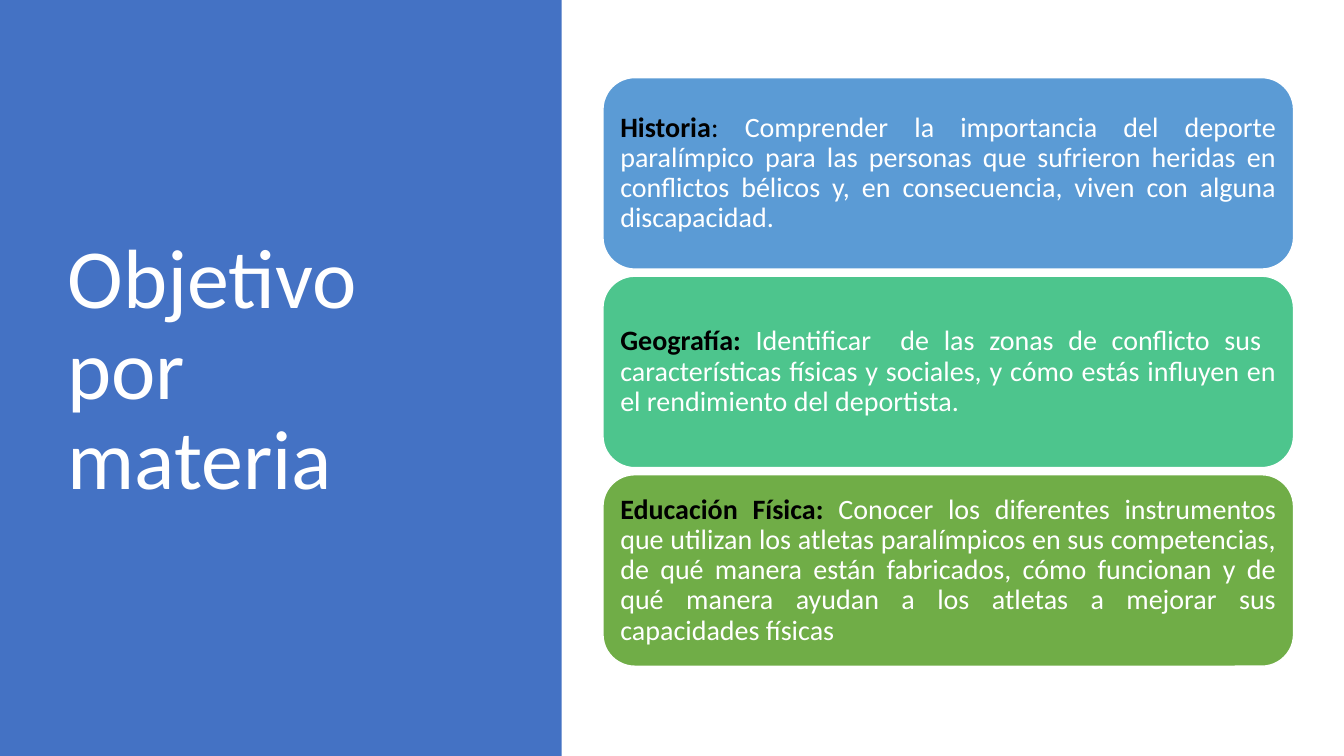
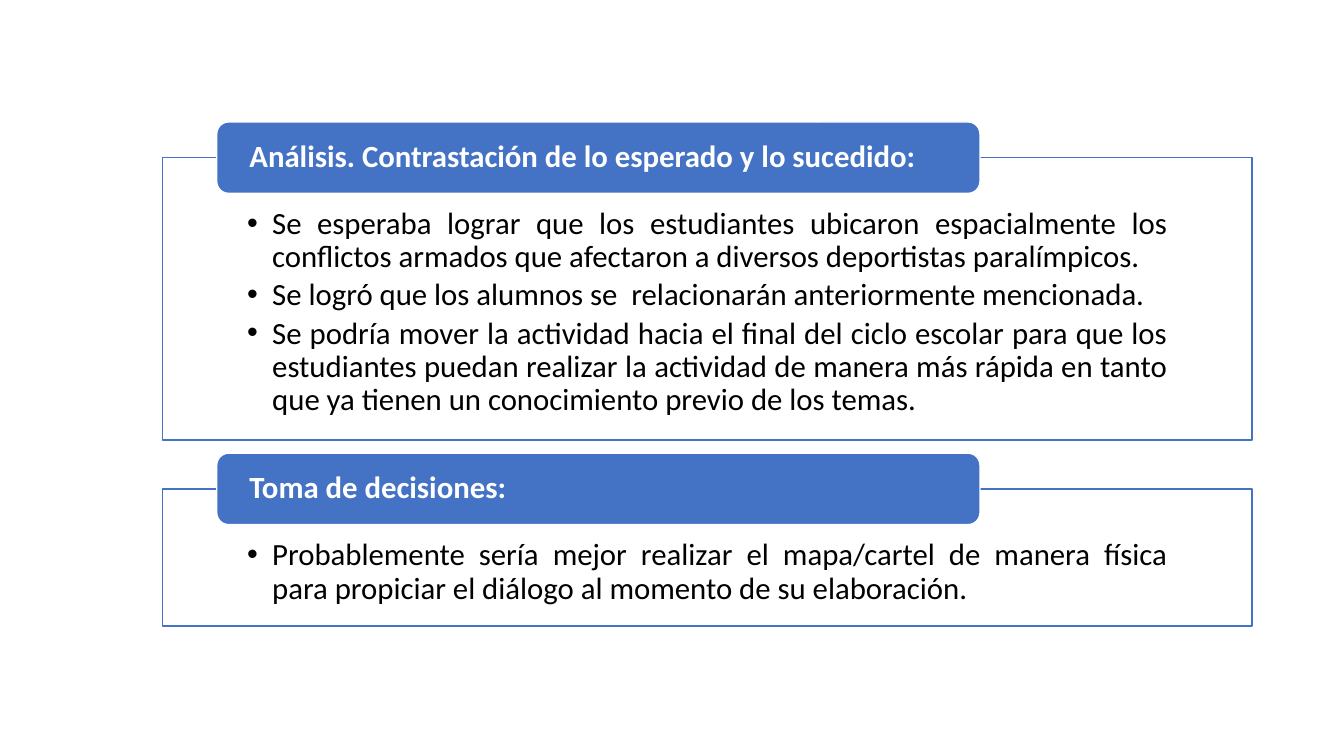
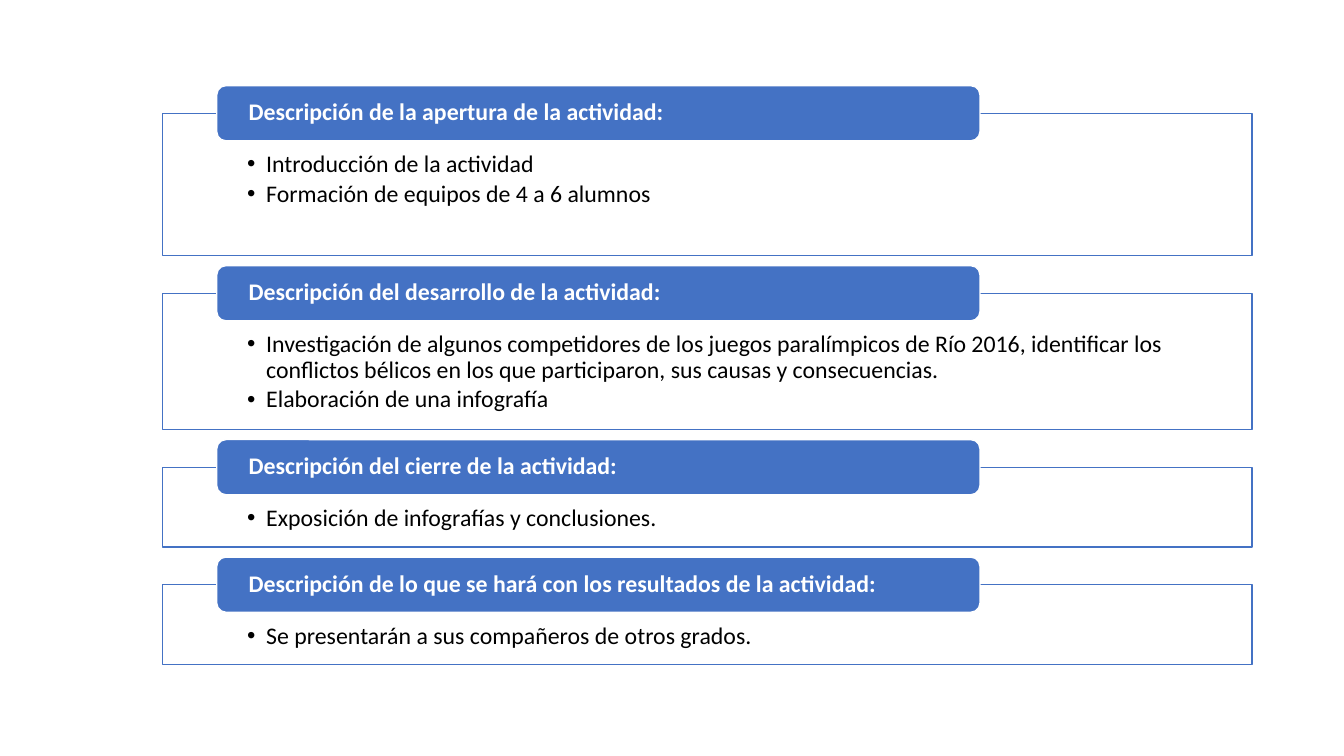
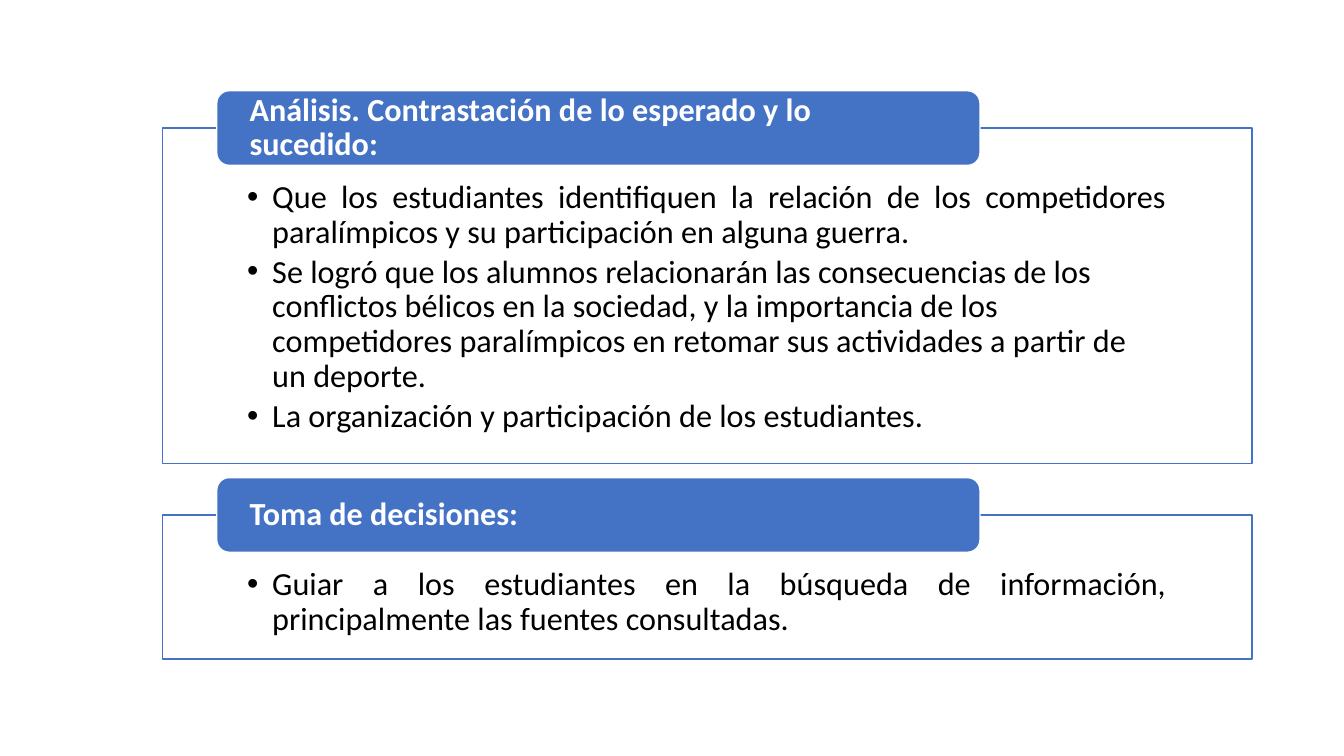
from lxml import etree
from pptx import Presentation
from pptx import util as u
from pptx.dml.color import RGBColor
from pptx.enum import shapes, text
from pptx.oxml.ns import qn

COLORS = {
    "white": "FFFFFF",
    "black": "000000",
    "blue": "4472C4",
    "sky": "5B9BD5",
    "mint": "4DC58D",
    "green": "70AD47",
}
FONT = "Calibri"
PX = 9144  # one hundredth of an inch
LEFT = text.PP_ALIGN.LEFT
JUSTIFY = text.PP_ALIGN.JUSTIFY
MIDDLE = text.MSO_ANCHOR.MIDDLE
TOP = text.MSO_ANCHOR.TOP
RECT = shapes.MSO_SHAPE.RECTANGLE
ROUNDED = shapes.MSO_SHAPE.ROUNDED_RECTANGLE
TITLE_ONLY, BLANK = 5, 6


def px(length):
    return u.Emu(round(length * PX))


def rgb(color):
    return RGBColor.from_string(COLORS[color])


class Deck:
    def __init__(self):
        self.prs = Presentation()
        self.prs.slide_width, self.prs.slide_height = px(1333), px(750)
        self.slide = None

    def new_slide(self, layout):
        self.slide = self.prs.slides.add_slide(self.prs.slide_layouts[layout])

    def box(self, kind, left, top, width, height, fill, line=None, opacity=None):
        shape = self.slide.shapes.add_shape(
            kind, px(left), px(top), px(width), px(height))
        shape.shadow.inherit = False
        shape.fill.solid()
        shape.fill.fore_color.rgb = rgb(fill)
        if opacity:
            srgb = shape.fill._xPr.find(".//" + qn("a:srgbClr"))
            etree.SubElement(srgb, qn("a:alpha"), val=str(opacity * 1000))
        if line:
            shape.line.color.rgb = rgb(line)
            shape.line.width = u.Pt(1)
        else:
            shape.line.fill.background()
        return shape

    def frame(self, shape, insets=(10, 5, 10, 5), anchor=MIDDLE):
        """Prepare the text frame; insets run left, top, right, bottom."""
        frame = shape.text_frame
        frame.word_wrap = True
        frame.auto_size = text.MSO_AUTO_SIZE.NONE
        frame.vertical_anchor = anchor
        (frame.margin_left, frame.margin_top,
         frame.margin_right, frame.margin_bottom) = map(px, insets)
        return frame

    def add_text(self, paragraph, content, size, color="white", bold=False,
                 align=LEFT, bullet_indent=0):
        """Append a formatted run; a bullet indent makes a list item."""
        paragraph.alignment = align
        paragraph.line_spacing = 0.9
        if bullet_indent:
            paragraph.space_after = u.Pt(0.16 * size)
            props = paragraph._p.get_or_add_pPr()
            props.set("marL", str(px(bullet_indent)))
            props.set("indent", str(-px(bullet_indent)))
            etree.SubElement(props, qn("a:buFont"), typeface="Arial")
            etree.SubElement(props, qn("a:buChar"), char="•")
        run = paragraph.add_run()
        run.text = content
        run.font.name, run.font.size, run.font.bold = FONT, u.Pt(size), bold
        run.font.color.rgb = rgb(color)

    def title(self, content, left, top, width, height):
        title = self.slide.shapes.title
        title.left, title.top, title.width, title.height = map(
            px, (left, top, width, height))
        self.add_text(self.frame(title).paragraphs[0], content, 60)

    def goal_card(self, top, fill, subject, colon_bold, goal):
        card = self.box(ROUNDED, 598, top, 685, 190, fill, line="white")
        paragraph = self.frame(card, (8, 8, 8, 8)).paragraphs[0]
        self.add_text(paragraph, subject, 20, "black", True, JUSTIFY)
        self.add_text(paragraph, ": ", 20, "black", colon_bold, JUSTIFY)
        self.add_text(paragraph, goal, 20, align=JUSTIFY)

    def section(self, top, height, size, heading, items):
        """Draw a framed list under its heading tab; return the frame's bottom."""
        tab_height = 3.22 * size
        frame_top = top + tab_height / 2
        panel = self.box(RECT, 161, frame_top, 1081, height, "white", "blue", 90)
        body = self.frame(panel, (84, 2.27 * size, 84, 0.78 * size), TOP)
        for index, (item, align) in enumerate(items):
            paragraph = body.add_paragraph() if index else body.paragraphs[0]
            self.add_text(paragraph, item, size, "black", align=align,
                          bullet_indent=25 if size > 20 else 19)
        tab = self.box(ROUNDED, 215, top, 757, tab_height, "blue", "white")
        self.add_text(self.frame(tab, (29, 0, 29, 0)).paragraphs[0],
                      heading, size, bold=True)
        return frame_top + height

    def section_slide(self, top, size, sections):
        self.new_slide(BLANK)
        for heading, height, items in sections:
            top = self.section(top, height, size, heading, items) + 0.6 * size


GOALS = [
    ("sky", "Historia", False,
     "Comprender la importancia del deporte paralímpico para las personas que "
     "sufrieron heridas en conflictos bélicos y, en consecuencia, viven con "
     "alguna discapacidad."),
    ("mint", "Geografía", True,
     "Identificar  de las zonas de conflicto sus  características físicas y "
     "sociales, y cómo estás influyen en el rendimiento del deportista."),
    ("green", "Educación Física", True,
     "Conocer los diferentes instrumentos que utilizan los atletas paralímpicos "
     "en sus competencias, de qué manera están fabricados, cómo funcionan y de "
     "qué manera ayudan a los atletas a mejorar sus capacidades físicas"),
]
ANALYSIS = "Análisis. Contrastación de lo esperado y lo sucedido:"
DECISIONS = "Toma de decisiones:"
MAP_REVIEW = [
    (ANALYSIS, 280, [
        ("Se esperaba lograr que los estudiantes ubicaron espacialmente los "
         "conflictos armados que afectaron a diversos deportistas paralímpicos.",
         JUSTIFY),
        ("Se logró que los alumnos se  relacionarán anteriormente mencionada.",
         JUSTIFY),
        ("Se podría mover la actividad hacia el final del ciclo escolar para que "
         "los estudiantes puedan realizar la actividad de manera más rápida en "
         "tanto que ya tienen un conocimiento previo de los temas.", JUSTIFY),
    ]),
    (DECISIONS, 136, [
        ("Probablemente sería mejor realizar el mapa/cartel de manera física "
         "para propiciar el diálogo al momento de su elaboración.", JUSTIFY),
    ]),
]
ACTIVITY = [
    ("Descripción de la apertura de la actividad:", 141, [
        ("Introducción de la actividad", LEFT),
        ("Formación de equipos de 4 a 6 alumnos", LEFT),
    ]),
    ("Descripción del desarrollo de la actividad:", 135, [
        ("Investigación de algunos competidores de los juegos paralímpicos de "
         "Río 2016, identificar los conflictos bélicos en los que participaron, "
         "sus causas y consecuencias.", LEFT),
        ("Elaboración de una infografía", LEFT),
    ]),
    ("Descripción del cierre de la actividad:", 79, [
        ("Exposición de infografías y conclusiones.", LEFT),
    ]),
    ("Descripción de lo que se hará con los resultados de la actividad:", 79, [
        ("Se presentarán a sus compañeros de otros grados.", LEFT),
    ]),
]
INFOGRAPHIC_REVIEW = [
    (ANALYSIS, 333, [
        ("Que los estudiantes identifiquen la relación de los competidores "
         "paralímpicos y su participación en alguna guerra.", JUSTIFY),
        ("Se logró que los alumnos relacionarán las consecuencias de los "
         "conflictos bélicos en la sociedad, y la importancia de los "
         "competidores paralímpicos en retomar sus actividades a partir de un "
         "deporte.", LEFT),
        ("La organización y participación de los estudiantes.", LEFT),
    ]),
    (DECISIONS, 143, [
        ("Guiar a los estudiantes en la búsqueda de información, principalmente "
         "las fuentes consultadas.", JUSTIFY),
    ]),
]


def main():
    deck = Deck()
    deck.new_slide(TITLE_ONLY)
    deck.box(RECT, 0, 0, 557, 750, "blue")
    # The title comes first in the layout, so it is raised above the band.
    title = deck.slide.shapes.title._element
    title.getparent().append(title)
    deck.title("Objetivo por materia", 57, 68, 414, 602)
    for row, goal in enumerate(GOALS):
        deck.goal_card(77 + row * 197, *goal)

    deck.section_slide(121, 22, MAP_REVIEW)
    deck.section_slide(85, 17, ACTIVITY)
    deck.section_slide(90, 23, INFOGRAPHIC_REVIEW)
    deck.prs.save("out.pptx")


if __name__ == "__main__":
    main()
